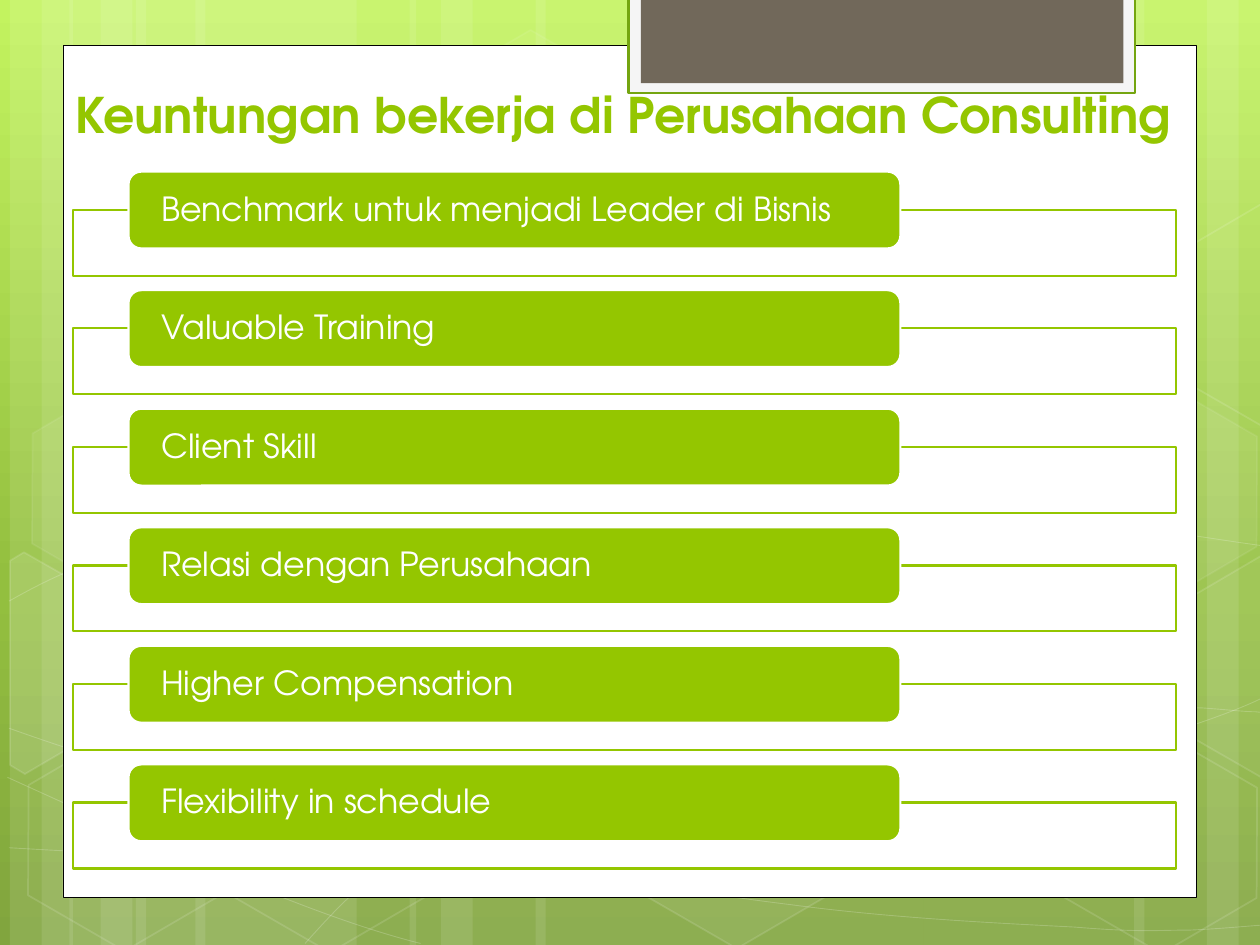
from copy import deepcopy
from math import cos, radians, sin

from lxml import etree
from pptx import Presentation
from pptx.dml.color import RGBColor
from pptx.enum.shapes import MSO_SHAPE
from pptx.enum.text import MSO_ANCHOR, PP_ALIGN
from pptx.oxml.ns import qn
from pptx.util import Cm, Pt

RECTANGLE = MSO_SHAPE.RECTANGLE
ROUNDED = MSO_SHAPE.ROUNDED_RECTANGLE
HEXAGON = MSO_SHAPE.HEXAGON
LEFT = PP_ALIGN.LEFT
MIDDLE = MSO_ANCHOR.MIDDLE
BOTTOM = MSO_ANCHOR.BOTTOM

GREEN = RGBColor(0x94, 0xC6, 0x00)
DARK_GREEN = RGBColor(0x74, 0xA5, 0x10)
WHITE = RGBColor(0xFF, 0xFF, 0xFF)
BLACK = RGBColor(0x00, 0x00, 0x00)
PALE = RGBColor(0xF5, 0xF5, 0xF5)
BROWN = RGBColor(0x71, 0x68, 0x5A)
GRADIENT = [(0, RGBColor(0xC3, 0xF3, 0x5F)),
            (0.62, RGBColor(0x93, 0xBF, 0x3F)),
            (1, RGBColor(0x81, 0xA5, 0x3E))]

FONT = "TeX Gyre Adventor"
WIDTH, HEIGHT = 25.4, 19.05
TILT = 30
TITLE = "Keuntungan bekerja di Perusahaan Consulting"
BENEFITS = ["Benchmark untuk menjadi Leader di Bisnis", "Valuable Training",
            "Client Skill", "Relasi dengan Perusahaan",
            "Higher Compensation", "Flexibility in schedule"]

STRIPES = [(2.74, 4.45, 0), (0.2, 1.27, 0), (0.84, 2.11, 0), (3.94, 4.45, 0),
           (1.4, 1.27, 0), (2.03, 2.11, 0), (18.62, 4.45, 180), (24.33, 1.27, 180),
           (22.86, 2.11, 180), (10.8, 7.82, 0), (8.26, 1.27, 0), (8.89, 2.11, 0)]
HEXAGONS = [(8.48, 0.91, 4, 8), (12.62, 14.96, 6, 12), (0.28, 15.01, 0, 12),
            (0.36, 7.92, 7, 8), (4.42, 15.04, 0, 12), (19.13, 11.51, 10, 12),
            (21.18, 15.06, 0, 12), (21.18, 7.98, 7, 8)]
LEFT_CUT = [(-0.71, -2.29), (-0.43, -2.46), (1.52, -1.35),
            (1.5, 0.89), (-0.41, 2.01), (-0.71, 1.83)]
RIGHT_CUT = [(-1.5, -0.89), (0.41, -2.01), (0.61, -1.88),
             (0.61, 2.36), (0.43, 2.46), (-1.5, 1.35)]
CUT_HEXAGONS = [(0.91, 13.59, LEFT_CUT, 10), (25.02, 13.21, RIGHT_CUT, 4),
                (25.02, 6.12, RIGHT_CUT, 0)]
CURVES = [
    [(0.18, 17.09), (1.55, 17.17), (2.92, 17.25), (4.83, 17.22), (6.73, 17.2),
     (9.09, 17.15), (11.63, 16.89), (14.17, 16.64), (17.78, 16.15), (20.12, 15.67),
     (22.43, 15.19), (24.82, 14.43), (25.58, 14)],
    [(0.18, 12.12), (0.91, 11.71), (1.65, 11.33), (3.07, 10.95), (4.52, 10.57),
     (6.58, 10.01), (8.81, 9.83), (11.07, 9.65), (13.82, 9.63), (16.61, 9.83),
     (19.41, 10.03), (24.05, 10.82), (25.58, 11.02)],
    [(0.15, 15.67), (3.23, 17.07), (6.27, 18.47), (8.48, 19.02)],
    [(0.18, 14.68), (0.97, 14.96), (1.78, 15.24), (3.25, 15.65), (4.72, 16.03),
     (6.93, 16.66), (9.07, 17.09), (11.18, 17.53), (13.84, 17.98), (15.95, 18.24),
     (18.06, 18.52), (20.32, 18.62), (21.67, 18.69), (22.99, 18.8), (23.34, 18.75),
     (24, 18.75), (24.66, 18.72), (25.12, 18.67), (25.58, 18.64)],
    [(6.15, 19.02), (6.6, 18.52), (7.06, 18.01), (7.67, 17.55), (8.28, 17.09),
     (9.14, 16.59), (9.86, 16.23), (10.57, 15.88), (11, 15.72), (11.94, 15.47),
     (12.85, 15.21), (14.55, 14.86), (15.44, 14.68), (16.36, 14.5), (16.48, 14.5),
     (17.27, 14.45), (18.06, 14.38), (19.3, 14.27), (20.17, 14.27), (21.06, 14.25),
     (22.5, 14.27), (22.5, 14.27), (23.1, 14.27), (23.6, 14.27), (24.21, 14.27),
     (24.66, 14.3), (25.1, 14.35), (25.32, 14.35), (25.55, 14.38), (25.48, 14.35),
     (25.55, 14.38)],
]


def set_color(fill, color, opacity):
    """Give a fill a solid colour with an opacity in percent, or none at zero."""
    if color is None or opacity == 0:
        fill.background()
        return
    fill.solid()
    fill.fore_color.rgb = color
    if opacity < 100:
        for element in fill._xPr.find(qn("a:solidFill")).iter(qn("a:srgbClr")):
            etree.SubElement(element, qn("a:alpha"), val=str(opacity * 1000))


def style_shape(shape, fill=None, opacity=100, line=None, weight=1, line_opacity=100):
    """Set the fill and outline of a shape and remove its shadow."""
    shape.shadow.inherit = False
    set_color(shape.fill, fill, opacity)
    set_color(shape.line.fill, line, line_opacity)
    if line is not None:
        shape.line.width = Pt(weight)


def add_box(slide, kind, box, **style):
    """Add a styled preset shape in a box given in centimetres."""
    shape = slide.shapes.add_shape(kind, *map(Cm, box))
    style_shape(shape, **style)
    return shape


def add_outline(slide, points, close, **style):
    """Add a styled freeform through points given in centimetres."""
    start, *others = [(Cm(x), Cm(y)) for x, y in points]
    builder = slide.shapes.build_freeform(*start)
    builder.add_line_segments(others, close=close)
    shape = builder.convert_to_shape()
    style_shape(shape, **style)
    return shape


def bend_lines(shape):
    """Turn each three line segments of a freeform into one cubic Bezier curve."""
    outline = shape._element.find(".//" + qn("a:pathLst"))[0]
    lines = outline.findall(qn("a:lnTo"))
    for first in range(0, len(lines), 3):
        curve = etree.SubElement(outline, qn("a:cubicBezTo"))
        for line in lines[first:first + 3]:
            curve.append(line[0])
            outline.remove(line)


def turn_back(point):
    """Rotate a point about the origin against the tilt of the hexagons."""
    x, y = point
    cosine, sine = cos(radians(TILT)), sin(radians(TILT))
    return x * cosine + y * sine, y * cosine - x * sine


def format_text(text_frame, text, color, frame_format, paragraph_format, font_format):
    """Write one paragraph and apply the formats to its parts."""
    text_frame.text = text
    paragraph = text_frame.paragraphs[0]
    font = paragraph.runs[0].font
    font.color.rgb = color
    for target, values in ((text_frame, {"word_wrap": True, **frame_format}),
                           (paragraph, {"alignment": LEFT, **paragraph_format}),
                           (font, {"name": FONT, **font_format})):
        for name, value in values.items():
            setattr(target, name, value)


def paint_background(slide):
    """Fill the background with the vertical green gradient."""
    fill = slide.background.fill
    fill.gradient()
    fill.gradient_angle = 270
    stops = slide.element.find(".//" + qn("a:gsLst"))
    stops.append(deepcopy(stops[0]))
    for stop, (position, color) in zip(fill.gradient_stops, GRADIENT):
        stop.position = position
        stop.color.rgb = color


def add_decoration(slide, left, top, height):
    """Add the translucent stripes, curves and hexagons."""
    for x, width, rotation in STRIPES:
        stripe = add_box(slide, RECTANGLE, (left + x, top, width, height),
                         fill=WHITE, opacity=10)
        stripe.rotation = rotation
    for controls in CURVES:
        points = [(left + x, top + y) for x, y in controls]
        bend_lines(add_outline(slide, points, False, line=WHITE, weight=0.5, line_opacity=20))
    for x, y, opacity, line_opacity in HEXAGONS:
        hexagon = add_box(slide, HEXAGON, (left + x, top + y, 4.45, 3.86), fill=WHITE,
                          opacity=opacity, line=WHITE, line_opacity=line_opacity)
        hexagon.rotation = TILT
        hexagon.adjustments[0] = 0.285
    for x, y, cut, opacity in CUT_HEXAGONS:
        points = [(left + x + dx, top + y + dy) for dx, dy in map(turn_back, cut)]
        piece = add_outline(slide, points, True, fill=WHITE, opacity=opacity,
                            line=WHITE, line_opacity=12)
        piece.rotation = TILT


def add_panel(slide, left, top, width, height):
    """Add the white panel with the brown tab hanging over its top edge."""
    add_box(slide, RECTANGLE, (left, top, width, height), fill=WHITE, line=BLACK, weight=0.5)
    add_box(slide, RECTANGLE, (left + 11.4, top - 0.96, 10.21, 1.93),
            fill=PALE, line=DARK_GREEN, weight=1.25)
    add_box(slide, RECTANGLE, (left + 11.65, top - 0.96, 9.73, 1.73), fill=BROWN)


def place_title(slide, left, top, width, height):
    """Move the title placeholder to the front of the panel and format it."""
    title = slide.shapes.title
    slide.shapes._spTree.append(title._element)
    for name, value in zip(("left", "top", "width", "height"), (left, top, width, height)):
        setattr(title, name, Cm(value))
    format_text(title.text_frame, TITLE, GREEN, {"vertical_anchor": BOTTOM}, {},
                {"size": Pt(28), "bold": True})


def add_benefits(slide, left, top, width, pitch):
    """Add a framed green bar with its label for each benefit, at an equal pitch."""
    frame_format = {"vertical_anchor": MIDDLE, "margin_left": Cm(0.58),
                    "margin_right": Cm(0.58), "margin_top": 0, "margin_bottom": 0}
    for row, benefit in enumerate(BENEFITS):
        row_top = top + row * pitch
        add_box(slide, RECTANGLE, (left, row_top + 0.77, width, 1.33),
                fill=WHITE, opacity=90, line=GREEN, weight=1.25)
        add_box(slide, ROUNDED, (left + 1.11, row_top, 0.7 * width, 1.55),
                fill=GREEN, line=WHITE, weight=1.25)
        label = slide.shapes.add_textbox(*map(Cm, (left + 1.19, row_top + 0.08, 15.42, 1.4)))
        format_text(label.text_frame, benefit, WHITE, frame_format,
                    {"line_spacing": 0.9}, {"size": Pt(19)})


def main():
    """Build the slide and save it."""
    presentation = Presentation()
    presentation.slide_width, presentation.slide_height = Cm(WIDTH), Cm(HEIGHT)
    slide = presentation.slides.add_slide(presentation.slide_layouts.get_by_name("Title Only"))
    paint_background(slide)
    add_decoration(slide, 0, 0, HEIGHT)
    add_panel(slide, 1.27, 0.91, 22.86, 17.19)
    place_title(slide, 1.27, 1.27, 23.65, 1.75)
    add_benefits(slide, 1.48, 3.46, 22.23, 2.39)
    presentation.save("out.pptx")


if __name__ == "__main__":
    main()
